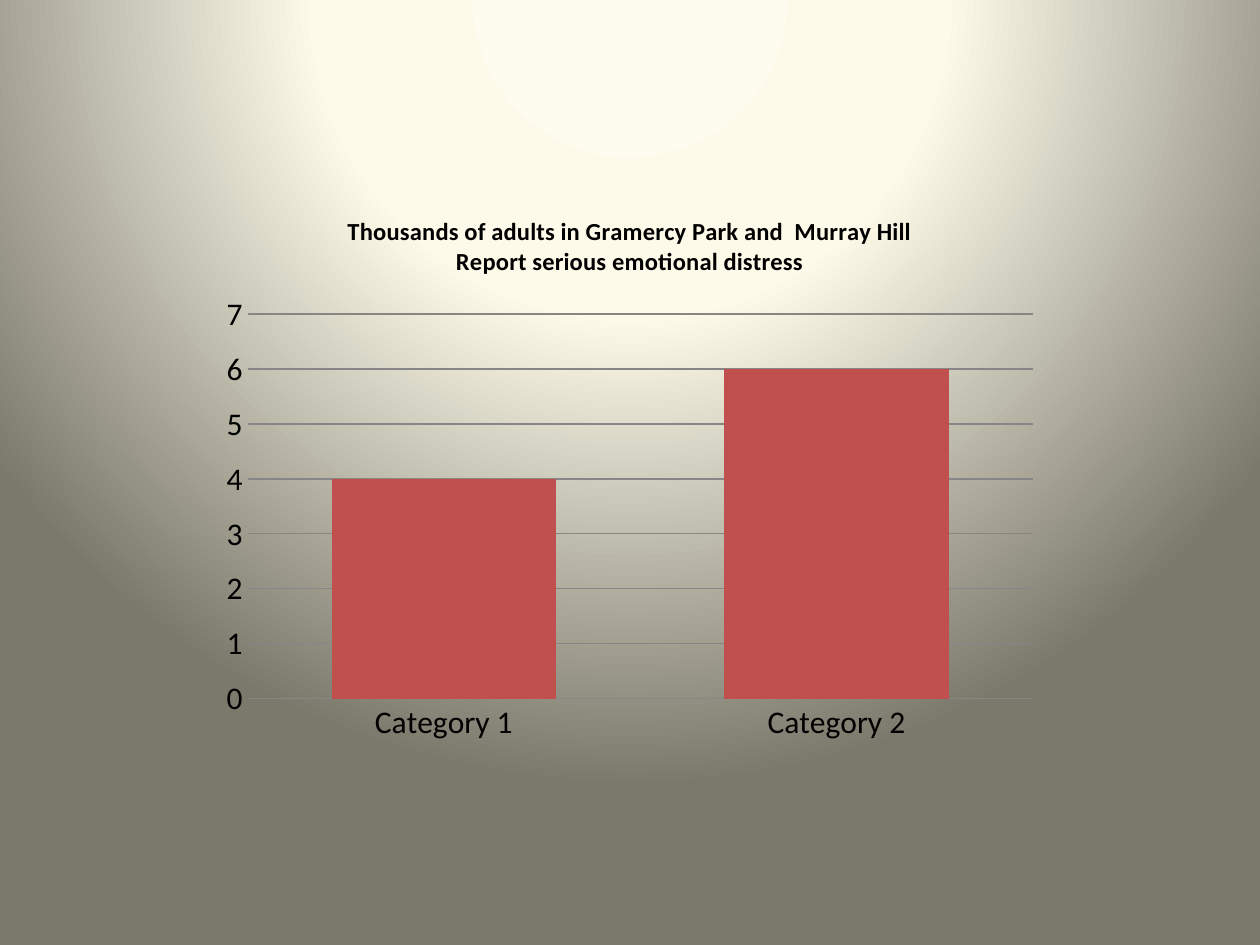
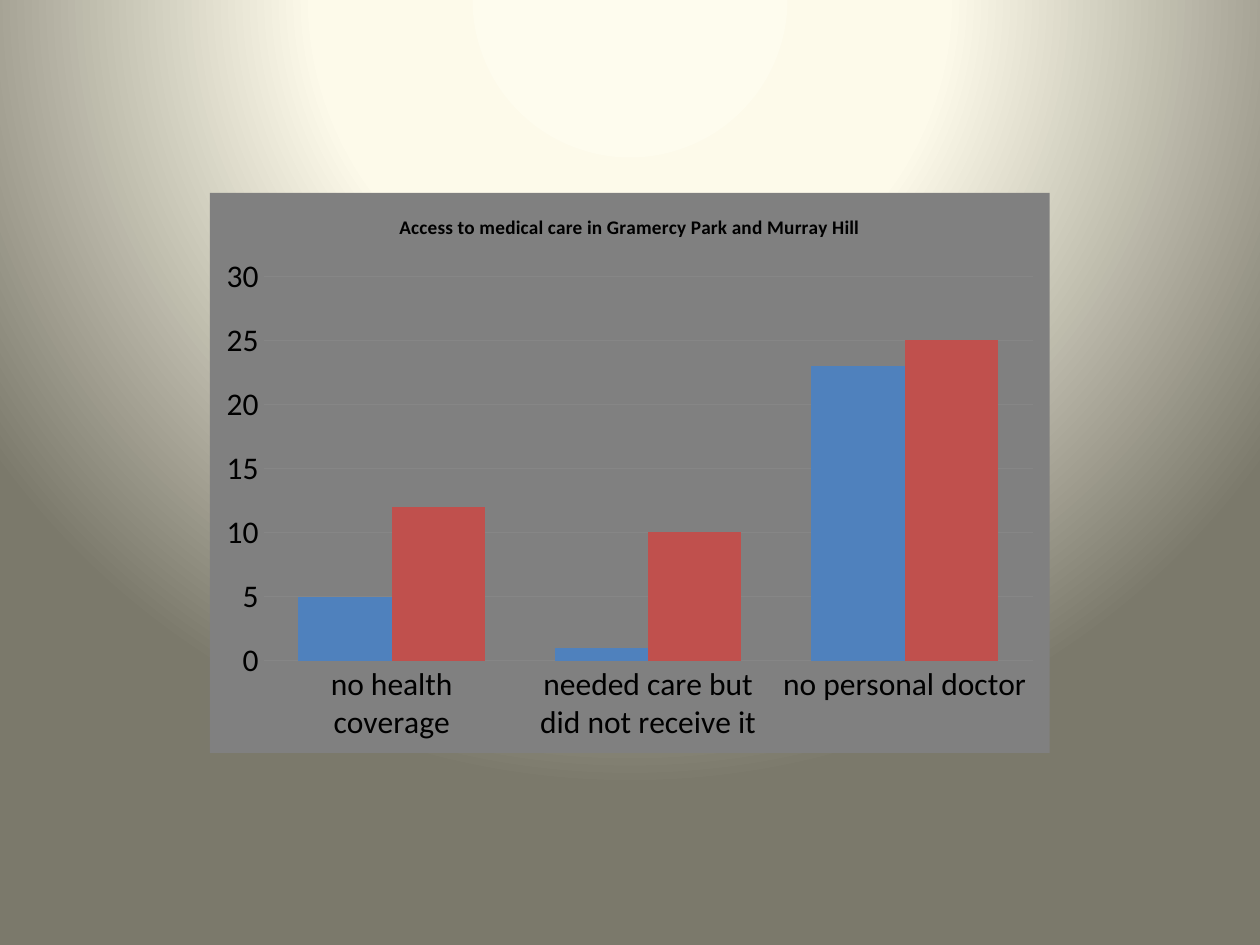
import pptx
import pptx.chart.data
import pptx.dml.color
import pptx.enum.chart
import pptx.oxml
import pptx.oxml.ns
import pptx.util

Cm, Pt = pptx.util.Cm, pptx.util.Pt
RGB = pptx.dml.color.RGBColor
KIND = pptx.enum.chart.XL_CHART_TYPE
TICK = pptx.enum.chart.XL_TICK_MARK

FONT = "Calibri"
BLACK = RGB(0x00, 0x00, 0x00)
GREY = RGB(0x80, 0x80, 0x80)
LINE = RGB(0x86, 0x86, 0x86)
BLUE = RGB(0x4F, 0x81, 0xBD)
RED = RGB(0xC0, 0x50, 0x4D)
GLOW = [(0, RGB(0xFE, 0xFC, 0xEE)),
        (40, RGB(0xFD, 0xFA, 0xEA)),
        (100, RGB(0x7B, 0x79, 0x6B))]
BOX = (Cm(4.23), Cm(3.89), Cm(16.93), Cm(11.29))


def paint(slide):
    """Fill the background with a radial glow from above the slide."""
    slide.background.fill.solid()
    holder = slide.element.find(".//" + pptx.oxml.ns.qn("p:bgPr"))
    stops = "".join(
        f'<a:gs pos="{pos * 1000}"><a:srgbClr val="{color}"/></a:gs>'
        for pos, color in GLOW)
    holder.replace(holder[0], pptx.oxml.parse_xml(
        f'<a:gradFill {pptx.oxml.ns.nsdecls("a")} rotWithShape="1">'
        f'<a:gsLst>{stops}</a:gsLst><a:path path="circle">'
        '<a:fillToRect l="50000" t="-80000" r="50000" b="180000"/>'
        '</a:path></a:gradFill>'))


def fill_area(chart, color):
    """Give the whole chart a flat fill, or none, and no border."""
    fill = (f'<a:solidFill><a:srgbClr val="{color}"/></a:solidFill>'
            if color else "<a:noFill/>")
    area = pptx.oxml.parse_xml(
        f'<c:spPr {pptx.oxml.ns.nsdecls("c", "a")}>{fill}'
        '<a:ln><a:noFill/></a:ln></c:spPr>')
    space = chart.element
    space.find(pptx.oxml.ns.qn("c:txPr")).addprevious(area)


def add_title(chart, lines, size):
    chart.has_title = True
    frame = chart.chart_title.text_frame
    for i, line in enumerate(lines):
        para = frame.add_paragraph() if i else frame.paragraphs[0]
        run = para.add_run()
        run.text = line
        run.font.name, run.font.size, run.font.bold = FONT, Pt(size), True
        run.font.color.rgb = BLACK


def style_axes(chart, top, step):
    for axis in (chart.category_axis, chart.value_axis):
        axis.major_tick_mark = axis.minor_tick_mark = TICK.NONE
    chart.category_axis.format.line.color.rgb = LINE
    scale = chart.value_axis
    scale.minimum_scale, scale.maximum_scale = 0, top
    scale.major_unit = step
    scale.format.line.fill.background()
    scale.has_major_gridlines = True
    grid = scale.major_gridlines.format.line
    grid.color.rgb, grid.width = LINE, Pt(0.75)


def chart_slide(deck, box, kind, title, size, cats, series, top, step,
                overlap=0, area=None):
    slide = deck.slides.add_slide(deck.slide_layouts[6])
    paint(slide)

    # Data
    data = pptx.chart.data.CategoryChartData()
    data.categories = cats
    for i, (vals, _) in enumerate(series, 1):
        data.add_series(f"Series {i}", vals)
    chart = slide.shapes.add_chart(kind, *box, data).chart

    # Text and frame
    chart.has_legend = False
    chart.font.name, chart.font.size = FONT, Pt(18)
    chart.font.color.rgb = BLACK
    fill_area(chart, area)
    add_title(chart, title, size)
    style_axes(chart, top, step)

    # Bars
    plot = chart.plots[0]
    plot.vary_by_categories = False
    plot.gap_width, plot.overlap = 75, overlap
    for bar, (_, color) in zip(plot.series, series):
        bar.format.fill.solid()
        bar.format.fill.fore_color.rgb = color


def main():
    deck = pptx.Presentation()
    deck.slide_width, deck.slide_height = Cm(25.4), Cm(19.05)

    # Emotional distress
    chart_slide(deck, BOX, KIND.COLUMN_STACKED,
                ["Thousands of adults in Gramercy Park and  Murray Hill",
                 "Report serious emotional distress"], 14,
                ["Category 1", "Category 2"], [([4, 6], RED)],
                top=7, step=1, overlap=100)

    # Access to care
    chart_slide(deck, BOX, KIND.COLUMN_CLUSTERED,
                ["Access to medical care in Gramercy Park and Murray Hill"], 11,
                ["no health coverage", "needed care but did not receive it",
                 "no personal doctor"],
                [([5, 1, 23], BLUE), ([12, 10, 25], RED)],
                top=30, step=5, area=GREY)

    deck.save("out.pptx")


if __name__ == "__main__":
    main()
